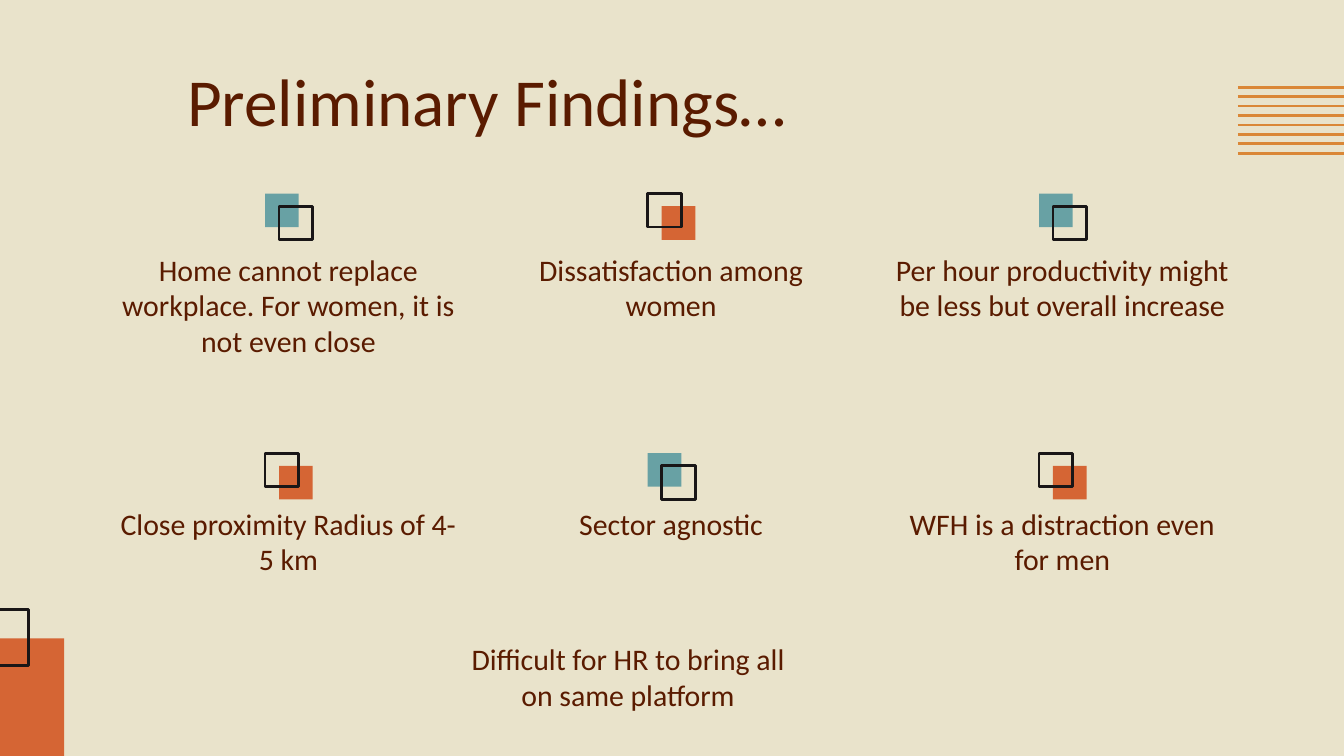
"""Build the Preliminary Findings slide."""
import pptx
import pptx.dml.color
import pptx.enum.shapes
import pptx.enum.text
import pptx.oxml.ns
import pptx.util

Pt = pptx.util.Pt
ALIGN = pptx.enum.text.PP_ALIGN

TITLE = "Preliminary Findings…"
FINDINGS = [
    [("Home cannot replace workplace. For women, it is not even close", 96.5),
     ("Dissatisfaction among women", 75.6),
     ("Per hour productivity might be less but overall increase", 68.4)],
    [("Close proximity Radius of 4-5 km", 66.2),
     ("Sector agnostic", 33.1),
     ("WFH is a distraction even for men", 97.2)],
]
CLOSING = "Difficult for HR to bring all on same platform"
SAND, BROWN, INK = "E9E3CB", "5A1B00", "191617"
TEAL, ORANGE, AMBER = "68A1A4", "D56534", "DA8737"
FONT = "Calibri"
WIDTH, HEIGHT = 720, 405
COLUMN_LEFTS = (57, 262, 471.6)
TEXT_TOPS = (127.4, 263.5)
ICON_TOPS = (103.7, 242.8)
TEXT_WIDTH, ICON_INDENT, ICON_SIZE = 195, 85, 18
ICON_SHIFT = (7.5, 6.8)
STRIPE_COUNT, STRIPE_LEFT, STRIPE_TOP, STRIPE_GAP = 8, 663.2, 46.7, 5.06


def color(value):
    return pptx.dml.color.RGBColor.from_string(value)


def add_square(page, left, top, width, height, fill=None, line=None):
    square = page.shapes.add_shape(
        pptx.enum.shapes.MSO_SHAPE.RECTANGLE, Pt(left), Pt(top), Pt(width), Pt(height))
    square.shadow.inherit = False
    if fill:
        square.fill.solid()
        square.fill.fore_color.rgb = color(fill)
    else:
        square.fill.background()
    if line:
        square.line.color.rgb = color(line)
        square.line.width = Pt(1.5)
    else:
        square.line.fill.background()


def add_stripe(page, top):
    stripe = page.shapes.add_connector(
        pptx.enum.shapes.MSO_CONNECTOR.STRAIGHT, Pt(STRIPE_LEFT), Pt(top), Pt(WIDTH), Pt(top))
    stripe.line.color.rgb = color(AMBER)
    stripe.line.width = Pt(1.5)
    properties = stripe._element.spPr
    properties.append(properties.makeelement(pptx.oxml.ns.qn("a:effectLst"), {}))


def write(box, text, size, align):
    frame = box.text_frame
    frame.word_wrap = True
    frame.auto_size = pptx.enum.text.MSO_AUTO_SIZE.NONE
    frame.vertical_anchor = pptx.enum.text.MSO_ANCHOR.TOP
    frame.margin_left = frame.margin_right = Pt(7.2)
    frame.margin_top = frame.margin_bottom = Pt(7.2)
    para = frame.paragraphs[0]
    para.alignment = align
    span = para.add_run()
    span.text = text
    span.font.name = FONT
    span.font.size = Pt(size)
    span.font.color.rgb = color(BROWN)


def add_finding(page, text, left, top, height):
    box = page.shapes.add_textbox(Pt(left), Pt(top), Pt(TEXT_WIDTH), Pt(height))
    write(box, text, 16, ALIGN.CENTER)


def add_icon(page, left, top, teal):
    upper = (left, top)
    lower = (left + ICON_SHIFT[0], top + ICON_SHIFT[1])
    solid, outline = (upper, lower) if teal else (lower, upper)
    add_square(page, *solid, ICON_SIZE, ICON_SIZE, fill=TEAL if teal else ORANGE)
    add_square(page, *outline, ICON_SIZE, ICON_SIZE, line=INK)


def main():
    deck = pptx.Presentation()
    deck.slide_width, deck.slide_height = Pt(WIDTH), Pt(HEIGHT)
    page = deck.slides.add_slide(deck.slide_layouts[5])
    page.background.fill.solid()
    page.background.fill.fore_color.rgb = color(SAND)

    for index in range(STRIPE_COUNT):
        add_stripe(page, STRIPE_TOP + index * STRIPE_GAP)
    add_square(page, 0, 342, 34.4, HEIGHT - 342, fill=ORANGE)
    add_square(page, -14.6, 326.7, 30, 29.8, line=INK)

    title = page.shapes.title
    title.left, title.top, title.width, title.height = Pt(93), Pt(24.5), Pt(534), Pt(57.6)
    write(title, TITLE, 36, ALIGN.LEFT)

    for row, findings in enumerate(FINDINGS):
        for column, (text, height) in enumerate(findings):
            left = COLUMN_LEFTS[column]
            add_finding(page, text, left, TEXT_TOPS[row], height)
            add_icon(page, left + ICON_INDENT, ICON_TOPS[row], (row + column) % 2 == 0)
    add_finding(page, CLOSING, 239, 336.2, 54)

    deck.save("out.pptx")


if __name__ == "__main__":
    main()
